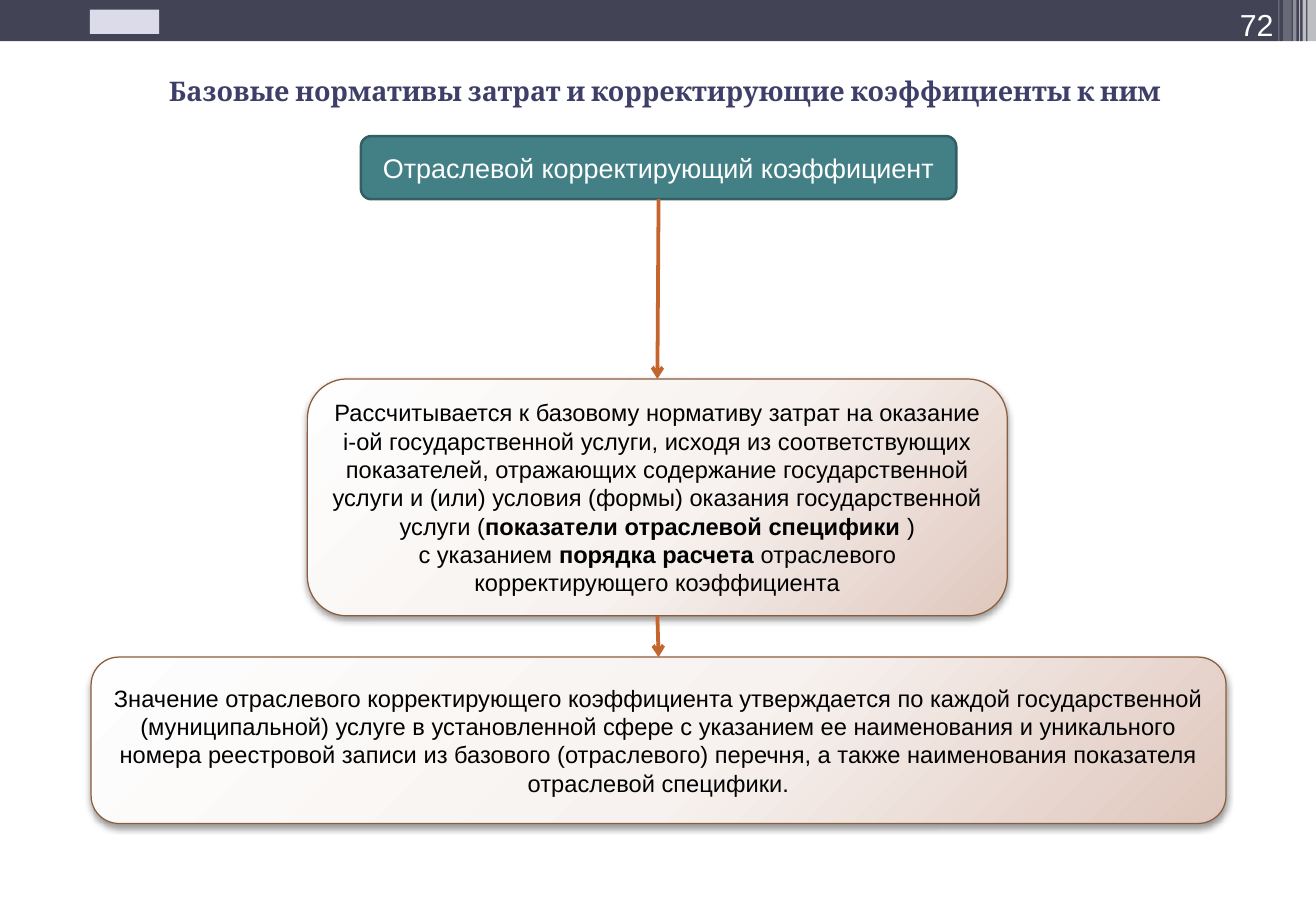
"""Builds the slide on the sector correction coefficient."""
from dataclasses import dataclass

from pptx import Presentation, oxml, util as u
from pptx.dml.color import RGBColor
from pptx.enum import shapes as s, text as t
from pptx.oxml import ns


@dataclass(frozen=True)
class Theme:
    """Colours, fonts and type sizes of the slide."""
    band: str = "424456"
    white: str = "FFFFFF"
    emblem: str = "DBDBE9"
    title: str = "3E3F68"
    header: str = "438086"
    header_edge: str = "325F63"
    card_edge: str = "8B5D3D"
    arrow: str = "C4652D"
    ink: str = "000000"
    card_stops: tuple = ((0, "FEFEFE"), (55, "F7F2EF"), (100, "DFC7BD"))
    title_font: str = "Cambria"
    body_font: str = "Arial"
    number_size: int = 18
    title_size: int = 16
    card_size: int = 14


@dataclass(frozen=True)
class Run:
    """A piece of text in one weight."""
    words: str
    bold: bool = False


@dataclass(frozen=True)
class Style:
    """The look of a piece of text."""
    font: str
    size: int
    colour: str


@dataclass(frozen=True)
class Box:
    """A rounded box of the diagram; without a fill it is a shaded card."""
    place: tuple
    paragraphs: tuple
    style: Style
    edge: str
    edge_width: float
    fill: str = ""


@dataclass(frozen=True)
class Stripe:
    """A translucent stripe at the right end of the band."""
    left: float
    width: float
    height: float
    opacity: int


THEME = Theme()
HEADER_TEXT = Style(THEME.body_font, THEME.title_size, THEME.white)
CARD_TEXT = Style(THEME.body_font, THEME.card_size, THEME.ink)

STRIPES = (
    Stripe(10.76, 0.07, 0.68, 65),
    Stripe(10.72, 0.03, 0.68, 65),
    Stripe(10.69, 0.01, 0.68, 60),
    Stripe(10.64, 0.03, 0.68, 40),
    Stripe(10.56, 0.07, 0.64, 20),
    Stripe(10.52, 0.01, 0.64, 30),
)

BOXES = (
    Box((2.97, 1.12, 4.9, 0.52),
        ((Run("Отраслевой корректирующий коэффициент"),),),
        HEADER_TEXT, THEME.header_edge, 1.5, THEME.header),
    Box((2.53, 3.12, 5.76, 1.95),
        ((Run("Рассчитывается к базовому нормативу затрат на оказание i-ой "
              "государственной услуги, исходя из соответствующих показателей, "
              "отражающих содержание государственной услуги и (или) условия "
              "(формы) оказания государственной услуги ("),
          Run("показатели отраслевой специфики ", True), Run(")")),
         (Run("с указанием "), Run("порядка расчета ", True),
          Run("отраслевого корректирующего коэффициента"))),
        CARD_TEXT, THEME.card_edge, 0.75),
    Box((0.75, 5.41, 9.34, 1.37),
        ((Run("Значение отраслевого корректирующего коэффициента утверждается "
              "по каждой государственной (муниципальной) услуге в установленной "
              "сфере с указанием ее наименования и уникального номера реестровой "
              "записи из базового (отраслевого) перечня, а также наименования "
              "показателя отраслевой специфики."),),),
        CARD_TEXT, THEME.card_edge, 0.75),
)


def inches(place: tuple) -> list:
    """Turns left, top, width and height into lengths."""
    return [u.Inches(length) for length in place]


def element(markup: str):
    """Makes a drawing element from markup with the a: prefix."""
    return oxml.parse_xml(markup.replace(">", f" {ns.nsdecls('a')}>", 1))


def write(frame, paragraphs: tuple, style: Style, align, anchor) -> None:
    """Fills a text frame run by run."""
    frame.word_wrap = True
    frame.auto_size = t.MSO_AUTO_SIZE.NONE
    frame.vertical_anchor = anchor
    for index, runs in enumerate(paragraphs):
        paragraph = frame.add_paragraph() if index else frame.paragraphs[0]
        paragraph.alignment = align
        for piece in runs:
            run = paragraph.add_run()
            run.text = piece.words
            run.font.name = style.font
            run.font.size = u.Pt(style.size)
            run.font.bold = piece.bold
            run.font.color.rgb = RGBColor.from_string(style.colour)


def add_plain(slide, kind, place: tuple, colour: str, opacity: int = 100):
    """Adds a flat shape without an outline."""
    shape = slide.shapes.add_shape(kind, *inches(place))
    shape.shadow.inherit = False
    shape.fill.solid()
    shape.fill.fore_color.rgb = RGBColor.from_string(colour)
    shape.line.fill.background()
    if opacity < 100:
        tint = shape._element.spPr.find(".//" + ns.qn("a:srgbClr"))
        tint.append(element(f'<a:alpha val="{opacity * 1000}"></a:alpha>'))
    return shape


def shade(shape) -> None:
    """Gives a card its radial gradient and soft shadow."""
    stops = "".join(f'<a:gs pos="{pos * 1000}"><a:srgbClr val="{colour}"/></a:gs>'
                    for pos, colour in THEME.card_stops)
    properties = shape._element.spPr
    properties.replace(properties.find(ns.qn("a:solidFill")), element(
        f'<a:gradFill rotWithShape="1"><a:gsLst>{stops}</a:gsLst><a:path path="circle">'
        '<a:fillToRect l="-40000" t="-90000" r="140000" b="190000"/></a:path></a:gradFill>'))
    properties.find(ns.qn("a:effectLst")).append(element(
        f'<a:outerShdw blurRad="{u.Pt(4.1)}" dist="{u.Pt(2)}" dir="5400000" rotWithShape="0">'
        f'<a:srgbClr val="{THEME.ink}"><a:alpha val="40000"/></a:srgbClr></a:outerShdw>'))


def add_box(slide, box: Box):
    """Adds a rounded box with its text."""
    shape = add_plain(slide, s.MSO_SHAPE.ROUNDED_RECTANGLE, box.place, box.fill or THEME.white)
    if not box.fill:
        shade(shape)
    shape.line.color.rgb = RGBColor.from_string(box.edge)
    shape.line.width = u.Pt(box.edge_width)
    write(shape.text_frame, box.paragraphs, box.style,
          t.PP_ALIGN.CENTER, t.MSO_ANCHOR.MIDDLE)
    return shape


def add_arrow(slide, upper, lower) -> None:
    """Joins the bottom of one box to the top of the next."""
    arrow = slide.shapes.add_connector(s.MSO_CONNECTOR.STRAIGHT, 0, 0, 0, 0)
    arrow.begin_connect(upper, 2)
    arrow.end_connect(lower, 0)
    arrow.line.color.rgb = RGBColor.from_string(THEME.arrow)
    arrow.line.width = u.Pt(2.25)
    arrow.line._get_or_add_ln().append(element('<a:tailEnd type="arrow"></a:tailEnd>'))
    arrow._element.spPr.append(element("<a:effectLst></a:effectLst>"))


def main() -> None:
    """Builds and saves the slide."""
    deck = Presentation()
    deck.slide_width, deck.slide_height = u.Inches(10.83), u.Inches(7.5)
    slide = deck.slides.add_slide(deck.slide_layouts[5])

    add_plain(slide, s.MSO_SHAPE.RECTANGLE, (0, 0, 10.83, 0.34), THEME.band)
    for stripe in STRIPES:
        add_plain(slide, s.MSO_SHAPE.RECTANGLE,
                  (stripe.left, 0, stripe.width, stripe.height), THEME.white, stripe.opacity)
    add_plain(slide, s.MSO_SHAPE.RECTANGLE, (0.74, 0.08, 0.57, 0.2), THEME.emblem)

    title = slide.shapes.title
    title.left, title.top, title.width, title.height = inches((0.51, 0.16, 9.93, 1.17))
    write(title.text_frame,
          ((Run("Базовые нормативы затрат и корректирующие коэффициенты к ним", True),),),
          Style(THEME.title_font, THEME.title_size, THEME.title),
          t.PP_ALIGN.CENTER, t.MSO_ANCHOR.MIDDLE)

    number = slide.shapes.add_textbox(*inches((9.68, 0, 0.9, 0.4)))
    write(number.text_frame, ((Run("72"),),),
          Style(THEME.body_font, THEME.number_size, THEME.white),
          t.PP_ALIGN.RIGHT, t.MSO_ANCHOR.BOTTOM)

    steps = [add_box(slide, box) for box in BOXES]
    for upper, lower in zip(steps, steps[1:]):
        add_arrow(slide, upper, lower)

    deck.save("out.pptx")


if __name__ == "__main__":
    main()
